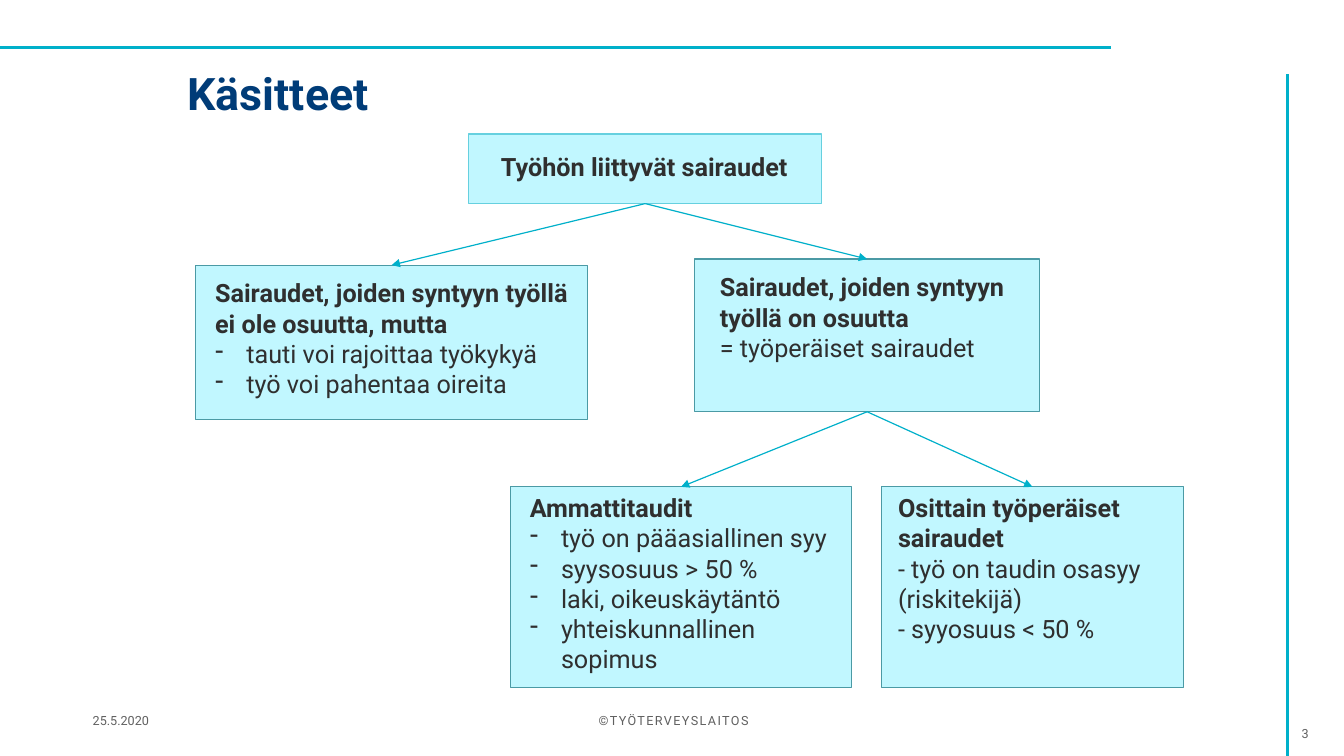
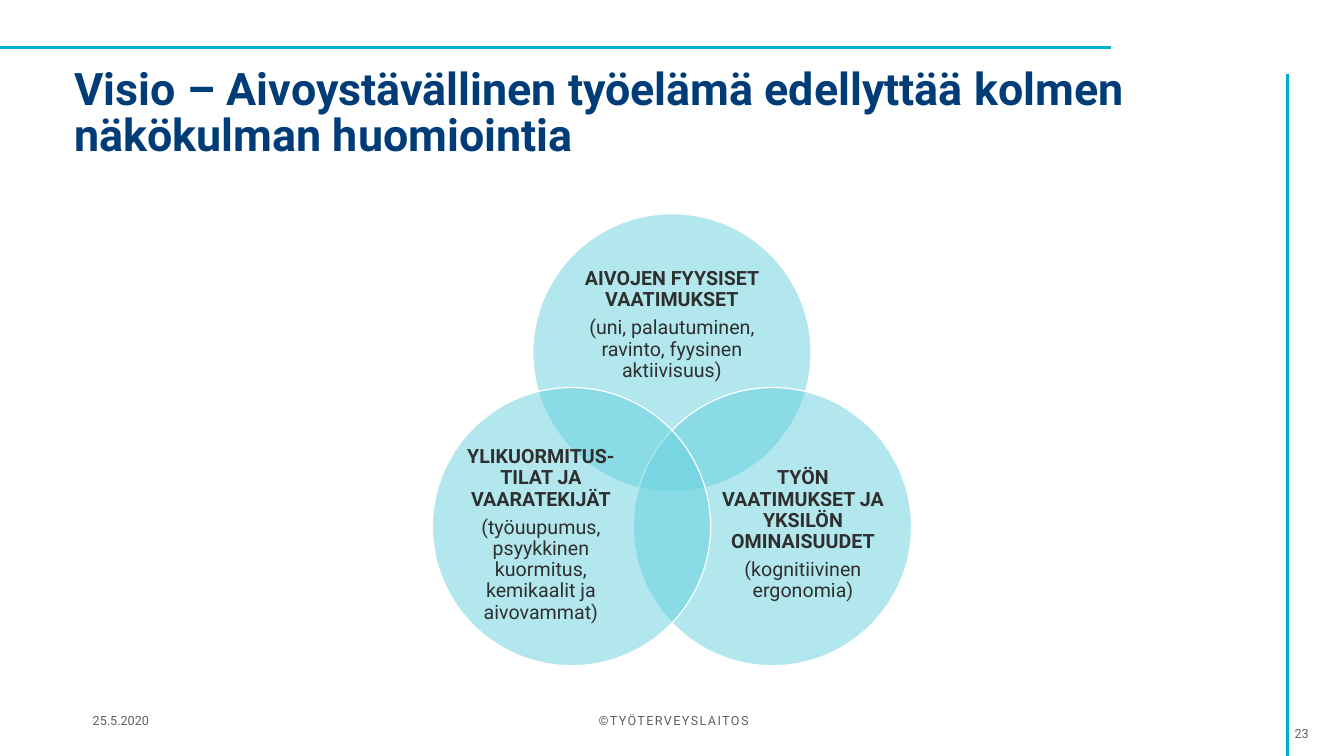
import math

from lxml import etree
from pptx import Presentation
from pptx import util as u
from pptx.dml.color import RGBColor
from pptx.enum import shapes, text
from pptx.oxml.ns import qn

TEAL = RGBColor(0x00, 0xB0, 0xCA)
AQUA = RGBColor(0x66, 0xD0, 0xDF)
PALE = RGBColor(0xC1, 0xF7, 0xFF)
EDGE = RGBColor(0x4B, 0x9A, 0xA5)
NAVY = RGBColor(0x00, 0x3C, 0x78)
INK = RGBColor(0x2F, 0x2F, 0x2F)
GREY = RGBColor(0x60, 0x60, 0x60)
WHITE = RGBColor(0xFF, 0xFF, 0xFF)

WIDE, HIGH = u.Inches(13.33), u.Inches(7.5)
FACE = "Roboto"
THIN, THICK = 0.85, 1.85
DASH = u.Inches(0.31)

LEFT, MID, RIGHT = text.PP_ALIGN.LEFT, text.PP_ALIGN.CENTER, text.PP_ALIGN.RIGHT
TOP, CENTRE, BASE = (text.MSO_ANCHOR.TOP, text.MSO_ANCHOR.MIDDLE,
                     text.MSO_ANCHOR.BOTTOM)

HEAD = {"size": u.Pt(32), "bold": True, "color": NAVY}
BODY = {"size": u.Pt(18), "bold": False, "color": INK}
RING = {"size": u.Pt(14), "bold": False, "color": INK}
NOTE = {"size": u.Pt(9), "bold": False, "color": GREY}


def area(x, y, w, h):
    """Turn percentages of the slide's size into lengths."""
    return [int(side * part / 100)
            for side, part in zip((WIDE, HIGH, WIDE, HIGH), (x, y, w, h))]


def style(run, form):
    run.font.name = FACE
    run.font.color.rgb = form["color"]
    for key in ("size", "bold"):
        setattr(run.font, key, form[key])


def frame(shape, anchor, pads=(0, 0, 0, 0)):
    """Set anchor and insets (left, top, right, bottom, in points)."""
    box = shape.text_frame
    form = {"word_wrap": True, "auto_size": text.MSO_AUTO_SIZE.NONE,
            "vertical_anchor": anchor}
    for side, pad in zip(("left", "top", "right", "bottom"), pads):
        form["margin_" + side] = u.Pt(pad)
    for key, val in form.items():
        setattr(box, key, val)
    return box


def bullet(para):
    props = para._p.get_or_add_pPr()
    props.set("marL", str(DASH))
    props.set("indent", str(-DASH))
    etree.SubElement(props, qn("a:buChar")).set("char", "-")


def fill_text(box, lines, form, **layout):
    """Write a bold first line and plain ones; a leading tab makes a bullet."""
    for num, line in enumerate(lines):
        para = box.paragraphs[0] if num == 0 else box.add_paragraph()
        if line.startswith("\t"):
            bullet(para)
        for key, val in layout.items():
            setattr(para, key, val)
        run = para.add_run()
        run.text = line.strip()
        style(run, {**form, "bold": num == 0})


def label(slide, place, words, align, gap=0):
    """Add a one-line footer text with letter spacing in points."""
    box = frame(slide.shapes.add_textbox(*place), CENTRE)
    para = box.paragraphs[0]
    para.alignment = align
    run = para.add_run()
    run.text = words
    style(run, NOTE)
    if gap:
        run.font._element.set("spc", str(gap * 100))


def line(slide, ends, width, arrow=False):
    link = slide.shapes.add_connector(shapes.MSO_CONNECTOR.STRAIGHT, *ends)
    link.line.color.rgb = TEAL
    link.line.width = u.Pt(width)
    etree.SubElement(link._element.spPr, qn("a:effectLst"))
    if arrow:
        stroke = link.line._get_or_add_ln()
        etree.SubElement(stroke, qn("a:tailEnd")).set("type", "triangle")
    return link


def solid(slide, kind, place, fill, edge):
    shape = slide.shapes.add_shape(kind, *place)
    shape.shadow.inherit = False
    shape.fill.solid()
    shape.fill.fore_color.rgb = fill
    shape.line.color.rgb = edge
    shape.line.width = u.Pt(THIN)
    return shape


def card(slide, place, lines, pads, edge=EDGE):
    shape = solid(slide, shapes.MSO_SHAPE.RECTANGLE, area(*place), PALE, edge)
    box = frame(shape, TOP, (*pads, 4, 0))
    fill_text(box, lines, BODY, alignment=LEFT)
    return shape


def arrow(slide, top, low):
    """Join the bottom of one card to the top of another."""
    link = line(slide, (0, 0, 0, 0), THIN, True)
    link.begin_connect(top, 2)
    link.end_connect(low, 0)


def circle(slide, mid, size):
    place = [int(mid[0] - size / 2), int(mid[1] - size / 2), size, size]
    shape = solid(slide, shapes.MSO_SHAPE.OVAL, place, AQUA, WHITE)
    tint = shape._element.spPr.find(qn("a:solidFill")).find(qn("a:srgbClr"))
    etree.SubElement(tint, qn("a:alpha")).set("val", "50000")


def caption(slide, mid, size, lines):
    place = [int(mid[0] - size[0] / 2), int(mid[1] - size[1] / 2),
             int(size[0]), int(size[1])]
    box = frame(slide.shapes.add_textbox(*place), CENTRE)
    fill_text(box, lines, RING, alignment=MID, line_spacing=0.9,
              space_after=u.Pt(5))


def page(deck, title, place, number):
    """Add a slide with its title, rules and footer."""
    slide = deck.slides.add_slide(deck.slide_layouts[5])
    line(slide, area(0, 6.27, 82.67, 6.27), THICK)
    line(slide, area(95.8, 100, 95.8, 9.73), THICK)
    head = slide.shapes.title
    for key, val in zip(("left", "top", "width", "height"), area(*place)):
        setattr(head, key, val)
    fill_text(frame(head, BASE), [title], HEAD,
              alignment=LEFT, line_spacing=0.85)
    label(slide, area(6.9, 92.67, 9.23, 5.33), "25.5.2020", LEFT)
    label(slide, area(18.98, 92.67, 62.27, 5.33), "©TYÖTERVEYSLAITOS", MID, 1)
    label(slide, area(70.67, 94.4, 26.71, 5.33), number, RIGHT)
    return slide


def terms(deck):
    slide = page(deck, "Käsitteet", (13.95, 1.6, 71.57, 14.27), "3")
    root = card(slide, (34.88, 17.73, 26.26, 9.2),
                ["Työhön liittyvät sairaudet"], (23, 12), AQUA)
    other = card(slide, (14.55, 35.07, 29.18, 20.4), [
        "Sairaudet, joiden syntyyn työllä ei ole osuutta, mutta",
        "\ttauti voi rajoittaa työkykyä",
        "\ttyö voi pahentaa oireita"], (14, 9))
    work = card(slide, (51.69, 34.27, 25.66, 20.2), [
        "Sairaudet, joiden syntyyn työllä on osuutta",
        "= työperäiset sairaudet"], (18, 9))
    main_type = card(slide, (37.96, 64.4, 25.43, 26.5), [
        "Ammattitaudit",
        "\ttyö on pääasiallinen syy",
        "\tsyysosuus > 50 %",
        "\tlaki, oikeuskäytäntö",
        "\tyhteiskunnallinen sopimus"], (14, 4))
    part = card(slide, (65.57, 64.4, 22.5, 26.5), [
        "Osittain työperäiset sairaudet",
        "- työ on taudin osasyy (riskitekijä)",
        "- syyosuus < 50 %"], (12, 4))
    for top, low in ((root, other), (root, work),
                     (work, main_type), (work, part)):
        arrow(slide, top, low)


def vision(deck):
    slide = page(deck, "Visio – Aivoystävällinen työelämä edellyttää kolmen "
                 "näkökulman huomiointia", (5.55, 9.87, 84.4, 11.33), "23")
    size = int(HIGH * 0.368)
    reach = size * 5 / 12
    # Angle, caption shift and caption size; the last two in diameters.
    rings = [
        (-90, (0, -0.1), (0.74, 0.45),
         ["AIVOJEN FYYSISET VAATIMUKSET",
          "(uni, palautuminen, ravinto, fyysinen aktiivisuus)"]),
        (30, (0.11, 0.03), (0.6, 0.55),
         ["TYÖN VAATIMUKSET JA YKSILÖN OMINAISUUDET",
          "(kognitiivinen ergonomia)"]),
        (150, (-0.11, 0.03), (0.6, 0.55),
         ["YLIKUORMITUS-TILAT JA VAARATEKIJÄT",
          "(työuupumus, psyykkinen kuormitus, kemikaalit ja aivovammat)"]),
    ]
    for angle, shift, span, lines in rings:
        turn = math.radians(angle)
        mid = (WIDE * 0.5 + reach * math.cos(turn),
               HIGH * 0.62 + reach * math.sin(turn))
        circle(slide, mid, size)
        caption(slide, [m + s * size for m, s in zip(mid, shift)],
                [s * size for s in span], lines)


def main():
    deck = Presentation()
    deck.slide_width, deck.slide_height = WIDE, HIGH
    terms(deck)
    vision(deck)
    deck.save("out.pptx")


if __name__ == "__main__":
    main()
